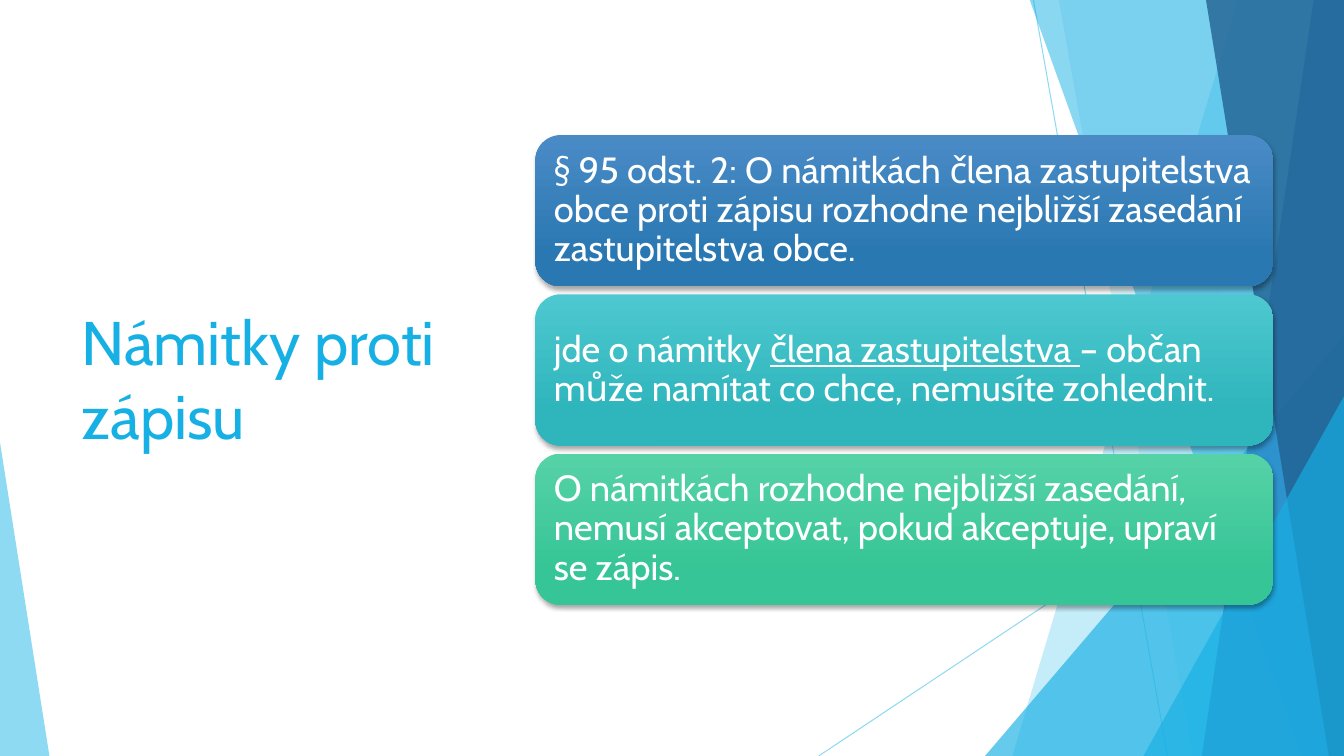
from dataclasses import dataclass
from typing import Any

from lxml import etree
from pptx import Presentation
from pptx.dml.color import RGBColor
from pptx.enum.shapes import MSO_CONNECTOR, MSO_SHAPE
from pptx.enum.text import MSO_ANCHOR
from pptx.oxml.ns import qn
from pptx.util import Inches, Pt

LINE = MSO_CONNECTOR.STRAIGHT
TRIANGLE = MSO_SHAPE.ISOSCELES_TRIANGLE
ROUNDED = MSO_SHAPE.ROUNDED_RECTANGLE
MIDDLE = MSO_ANCHOR.MIDDLE

WIDTH, HEIGHT = 13.33, 7.5
TOP = -0.01


@dataclass(frozen=True)
class Theme:
    font: str = "Cabin"
    title: int = 44
    body: int = 26
    white: str = "FFFFFF"
    black: str = "000000"
    pale: str = "5FCBEF"
    sky: str = "17B0E4"
    blue: str = "2E83C3"
    navy: str = "226292"


THEME = Theme()


@dataclass(frozen=True)
class Ray:
    start: tuple[float, float]
    end: tuple[float, float]


@dataclass(frozen=True)
class Band:
    """Strip reaching the right edge; head and foot are its left corners."""
    head: float
    foot: float
    color: str
    alpha: int


@dataclass(frozen=True)
class Wedge:
    """Right triangle on the bottom edge; peak is 0 for left, 1 for right."""
    left: float
    top: float
    width: float
    peak: int
    color: str
    alpha: int


@dataclass(frozen=True)
class Words:
    text: str
    under: bool = False


@dataclass(frozen=True)
class Card:
    light: str
    deep: str
    words: tuple[Words, ...]


RAYS = (Ray((10.25, 0), (11.58, HEIGHT)), Ray((WIDTH, 4.03), (8.12, HEIGHT)))

FACETS = (
    Band(12.28, 10.04, THEME.pale, 36),
    Band(10.5, 11.83, THEME.pale, 20),
    Wedge(9.77, 3.33, 3.56, 1, THEME.sky, 66),
    Band(10.21, 12.91, THEME.sky, 50),
    Band(13.03, 11.92, THEME.blue, 70),
    Band(11.96, 13.18, THEME.navy, 80),
    Wedge(11.34, 3.93, 1.99, 1, THEME.sky, 66),
    Wedge(0, 4.39, 0.49, 0, THEME.pale, 70),
)

CARDS = (
    Card("4A8BC6", "2A78B2", (
        Words("§ 95 odst. 2: O námitkách člena zastupitelstva obce proti zápisu "
              "rozhodne nejbližší zasedání zastupitelstva obce."),
    )),
    Card("4DC8D0", "2FB5BC", (
        Words("jde o námitky "),
        Words("člena zastupitelstva ", under=True),
        Words("– občan může namítat co chce, nemusíte zohlednit."),
    )),
    Card("56D2A7", "36C596", (
        Words("O námitkách rozhodne nejbližší zasedání, nemusí akceptovat, "
              "pokud akceptuje, upraví se zápis."),
    )),
)


def paint(fill: Any, color: str, alpha: int) -> None:
    """Set a solid fill with its opacity in percent."""
    fill.solid()
    fill.fore_color.rgb = RGBColor.from_string(color)
    for node in fill._xPr.iter(qn("a:srgbClr")):
        etree.SubElement(node, qn("a:alpha"), val=str(alpha * 1000))


def write(para: Any, words: Words, size: int, color: str) -> None:
    run = para.add_run()
    run.text = words.text
    run.font.name = THEME.font
    run.font.size = Pt(size)
    run.font.color.rgb = RGBColor.from_string(color)
    if words.under:
        run.font.underline = True


def draw_ray(shapes: Any, ray: Ray) -> None:
    ends = (Inches(value) for value in ray.start + ray.end)
    line = shapes.add_connector(LINE, *ends)
    line.line.width = Pt(0.75)
    paint(line.line.fill, THEME.pale, 70)
    etree.SubElement(line._element.spPr, qn("a:effectLst"))


def draw_facet(shapes: Any, facet: Band | Wedge) -> None:
    if isinstance(facet, Band):
        spots = [(Inches(x), Inches(y)) for x, y in (
            (facet.head, TOP), (WIDTH, TOP), (WIDTH, HEIGHT), (facet.foot, HEIGHT))]
        path = shapes.build_freeform(*spots[0])
        path.add_line_segments(spots[1:], close=True)
        shape = path.convert_to_shape()
    else:
        shape = shapes.add_shape(
            TRIANGLE, Inches(facet.left), Inches(facet.top),
            Inches(facet.width), Inches(HEIGHT - facet.top))
        shape.adjustments[0] = facet.peak
    paint(shape.fill, facet.color, facet.alpha)
    shape.line.fill.background()
    shape.shadow.inherit = False


def drop_shadow(shape: Any) -> None:
    shape.shadow.inherit = False
    effects = shape._element.spPr.find(qn("a:effectLst"))
    outer = etree.SubElement(
        effects, qn("a:outerShdw"), blurRad=str(Pt(3)), dist=str(Pt(2)),
        dir="5400000", algn="ctr", rotWithShape="0")
    color = etree.SubElement(outer, qn("a:srgbClr"), val=THEME.black)
    etree.SubElement(color, qn("a:alpha"), val="35000")


def draw_card(shapes: Any, card: Card, top: float) -> None:
    shape = shapes.add_shape(
        ROUNDED, Inches(5.31), Inches(top), Inches(7.32), Inches(1.5))
    shape.fill.gradient()
    shape.fill.gradient_angle = 270
    stops = zip(shape.fill.gradient_stops, (0, 0.78), (card.light, card.deep))
    for stop, place, color in stops:
        stop.position = place
        stop.color.rgb = RGBColor.from_string(color)
    shape.line.fill.background()
    drop_shadow(shape)

    frame = shape.text_frame
    frame.word_wrap = True
    frame.vertical_anchor = MIDDLE
    frame.margin_left = frame.margin_right = Inches(0.11)
    frame.margin_top = frame.margin_bottom = Inches(0.11)
    para = frame.paragraphs[0]
    para.alignment = 1
    para.line_spacing = 0.9
    for words in card.words:
        write(para, words, THEME.body, THEME.white)


def draw_title(shapes: Any) -> None:
    box = shapes.add_textbox(Inches(0.71), Inches(1.51), Inches(3.88), Inches(4.48))
    box.text_frame.word_wrap = True
    box.text_frame.vertical_anchor = MIDDLE
    write(box.text_frame.paragraphs[0], Words("Námitky proti zápisu"),
          THEME.title, THEME.sky)


def main() -> None:
    deck = Presentation()
    deck.slide_width, deck.slide_height = Inches(WIDTH), Inches(HEIGHT)
    shapes = deck.slides.add_slide(deck.slide_layouts[6]).shapes
    for ray in RAYS:
        draw_ray(shapes, ray)
    for facet in FACETS:
        draw_facet(shapes, facet)
    draw_title(shapes)
    for row, card in enumerate(CARDS):
        draw_card(shapes, card, 1.34 + row * 1.58)
    deck.save("out.pptx")


if __name__ == "__main__":
    main()
